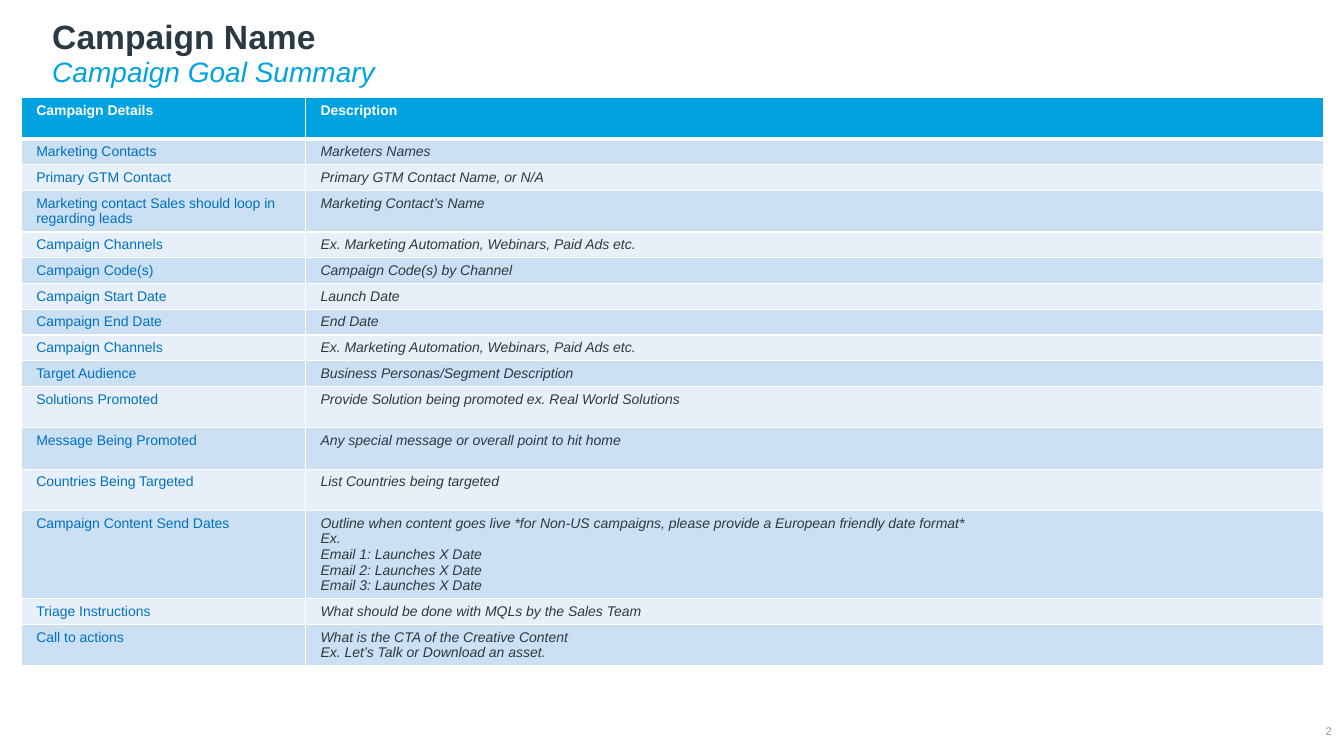
from dataclasses import dataclass

from lxml import etree
from pptx import Presentation
from pptx.dml.color import RGBColor
from pptx.enum.text import MSO_ANCHOR, PP_ALIGN
from pptx.oxml.ns import qn
from pptx.slide import Slide
from pptx.table import _Cell
from pptx.text.text import TextFrame
from pptx.util import Inches, Pt

TOP, MIDDLE, BOTTOM = MSO_ANCHOR.TOP, MSO_ANCHOR.MIDDLE, MSO_ANCHOR.BOTTOM
LEFT, RIGHT = PP_ALIGN.LEFT, PP_ALIGN.RIGHT
FONT = "Arial"
COLORS = {
    "white": "FFFFFF",
    "accent": "00A3E0",
    "dark": "2B3A42",
    "label": "0070C0",
    "gray": "959CA0",
    "band_odd": "CCE0F3",
    "band_even": "E7F0F9",
}
COLUMN_WIDTHS = (2.82, 10.1)
LINE_HEIGHT = 0.25
TALL_HEIGHT = 0.41


@dataclass(frozen=True)
class TextStyle:
    size: float
    color: str
    bold: bool = False
    italic: bool = False


@dataclass(frozen=True)
class Caption:
    text: str
    left: float
    top: float
    width: float
    height: float
    style: TextStyle
    anchor: MSO_ANCHOR = TOP
    align: PP_ALIGN = LEFT
    margin_x: float = 0.1
    margin_y: float = 0.05
    line_spacing: float = 1.0


@dataclass(frozen=True)
class Detail:
    label: str
    description: str
    height: float = LINE_HEIGHT


HEADER_STYLE = TextStyle(10, "white", bold=True)
LABEL_STYLE = TextStyle(10, "label")
DESCRIPTION_STYLE = TextStyle(10, "dark", italic=True)

CAPTIONS = (
    Caption("Campaign Name", 0.42, -0.23, 12.4, 0.84,
            TextStyle(24, "dark", bold=True), anchor=BOTTOM, line_spacing=0.9),
    Caption("Campaign Goal Summary", 0.42, 0.53, 12.4, 0.44,
            TextStyle(20, "accent", italic=True), line_spacing=0.9),
    Caption("2", 12.82, 7.16, 0.39, 0.19, TextStyle(8, "gray"),
            anchor=MIDDLE, align=RIGHT, margin_x=0, margin_y=0),
)

CHANNELS = Detail("Campaign Channels", "Ex. Marketing Automation, Webinars, Paid Ads etc.")
SEND_DATES = "\n".join((
    "Outline when content goes live *for Non-US campaigns, "
    "please provide a European friendly date format*",
    "Ex.",
    "Email 1: Launches X Date",
    "Email 2: Launches X Date",
    "Email 3: Launches X Date",
))
DETAILS = (
    Detail("Campaign Details", "Description", TALL_HEIGHT),
    Detail("Marketing Contacts", "Marketers Names"),
    Detail("Primary GTM Contact", "Primary GTM Contact Name, or N/A"),
    Detail("Marketing contact Sales should loop in regarding leads",
           "Marketing Contact’s Name", TALL_HEIGHT),
    CHANNELS,
    Detail("Campaign Code(s)", "Campaign Code(s) by Channel"),
    Detail("Campaign Start Date", "Launch Date"),
    Detail("Campaign End Date", "End Date"),
    CHANNELS,
    Detail("Target Audience", "Business Personas/Segment Description"),
    Detail("Solutions Promoted",
           "Provide Solution being promoted ex. Real World Solutions", TALL_HEIGHT),
    Detail("Message Being Promoted",
           "Any special message or overall point to hit home", TALL_HEIGHT),
    Detail("Countries Being Targeted", "List Countries being targeted", TALL_HEIGHT),
    Detail("Campaign Content Send Dates", SEND_DATES, 0.87),
    Detail("Triage Instructions", "What should be done with MQLs by the Sales Team"),
    Detail("Call to actions",
           "What is the CTA of the Creative Content\nEx. Let’s Talk or Download an asset.",
           TALL_HEIGHT),
)


def rgb(name: str) -> RGBColor:
    return RGBColor.from_string(COLORS[name])


def write_text(text_frame: TextFrame, text: str, style: TextStyle,
               align: PP_ALIGN = LEFT, line_spacing: float = 1.0) -> None:
    text_frame.text = text
    for paragraph in text_frame.paragraphs:
        paragraph.alignment = align
        paragraph.line_spacing = line_spacing
        for run in paragraph.runs:
            run.font.name = FONT
            run.font.size = Pt(style.size)
            run.font.bold = style.bold
            run.font.italic = style.italic
            run.font.color.rgb = rgb(style.color)


def add_caption(slide: Slide, caption: Caption) -> None:
    shape = slide.shapes.add_textbox(Inches(caption.left), Inches(caption.top),
                                     Inches(caption.width), Inches(caption.height))
    text_frame = shape.text_frame
    text_frame.word_wrap = True
    text_frame.vertical_anchor = caption.anchor
    text_frame.margin_left = text_frame.margin_right = Inches(caption.margin_x)
    text_frame.margin_top = text_frame.margin_bottom = Inches(caption.margin_y)
    write_text(text_frame, caption.text, caption.style, caption.align, caption.line_spacing)


def set_borders(cell: _Cell, top: float, bottom: float) -> None:
    properties = cell._tc.get_or_add_tcPr()
    for side, width in (("L", 1), ("R", 1), ("T", top), ("B", bottom)):
        line = etree.SubElement(properties, qn(f"a:ln{side}"), w=str(Pt(width)))
        fill = etree.SubElement(line, qn("a:solidFill"))
        etree.SubElement(fill, qn("a:srgbClr"), val=COLORS["white"])


def format_cell(cell: _Cell, text: str, style: TextStyle, row_index: int) -> None:
    set_borders(cell, top=3 if row_index == 1 else 1, bottom=3 if row_index == 0 else 1)
    band = "band_odd" if row_index % 2 else "band_even"
    cell.fill.solid()
    cell.fill.fore_color.rgb = rgb("accent" if row_index == 0 else band)
    cell.margin_left = cell.margin_right = Inches(0.15)
    cell.margin_top = cell.margin_bottom = Inches(0.05)
    cell.vertical_anchor = TOP
    write_text(cell.text_frame, text, style)


def add_details_table(slide: Slide) -> None:
    total_height = sum(detail.height for detail in DETAILS)
    table = slide.shapes.add_table(
        len(DETAILS), len(COLUMN_WIDTHS), Inches(0.21), Inches(0.97),
        Inches(sum(COLUMN_WIDTHS)), Inches(total_height)).table
    for column, width in zip(table.columns, COLUMN_WIDTHS):
        column.width = Inches(width)
    for row_index, detail in enumerate(DETAILS):
        row = table.rows[row_index]
        row.height = Inches(detail.height)
        styles = (LABEL_STYLE, DESCRIPTION_STYLE) if row_index else (HEADER_STYLE,) * 2
        for cell, text, style in zip(row.cells, (detail.label, detail.description), styles):
            format_cell(cell, text, style, row_index)


def main() -> None:
    presentation = Presentation()
    presentation.slide_width = Inches(13.33)
    presentation.slide_height = Inches(7.5)
    slide = presentation.slides.add_slide(presentation.slide_layouts[6])

    # Campaign details
    add_details_table(slide)

    # Title, subtitle and page number
    for caption in CAPTIONS:
        add_caption(slide, caption)

    presentation.save("out.pptx")


if __name__ == "__main__":
    main()
